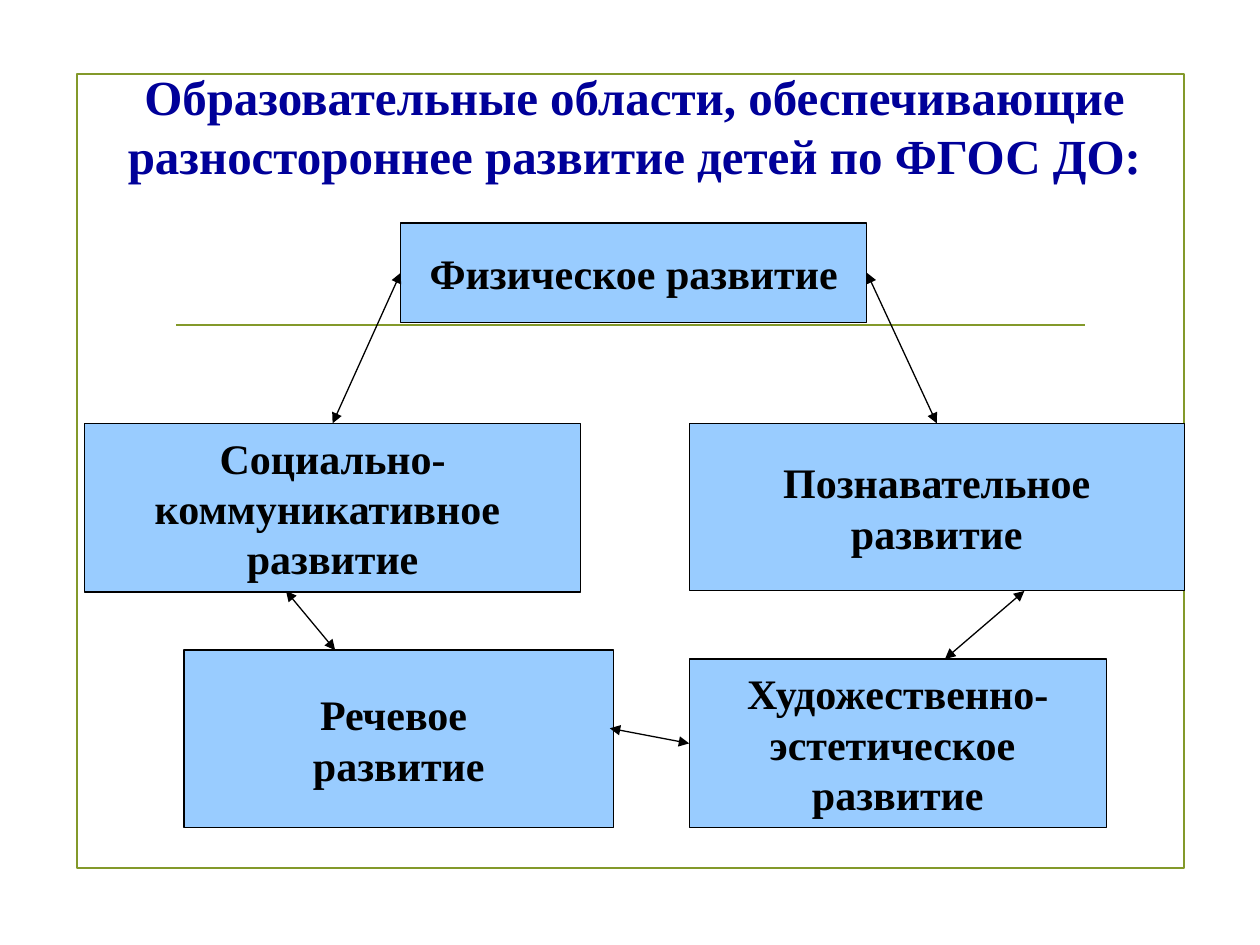
from pptx import Presentation
from pptx.dml.color import RGBColor
from pptx.enum.shapes import MSO_CONNECTOR, MSO_SHAPE
from pptx.enum.text import MSO_ANCHOR, PP_ALIGN
from pptx.oxml.ns import qn
from pptx.util import Inches, Pt
from lxml import etree

RECTANGLE = MSO_SHAPE.RECTANGLE
STRAIGHT = MSO_CONNECTOR.STRAIGHT
CENTER = PP_ALIGN.CENTER
MIDDLE = MSO_ANCHOR.MIDDLE
TOP, LEFT, RIGHT = 0, 1, 3  # connection sites of a rectangle

OLIVE = RGBColor(0x83, 0x99, 0x2A)
NAVY = RGBColor(0x00, 0x00, 0x99)
SKY = RGBColor(0x99, 0xCC, 0xFF)
BLACK = RGBColor(0x00, 0x00, 0x00)
FONT = "Times New Roman"

# The slide is a grid of 100 columns and 75 rows
WIDTH, HEIGHT = Inches(10), Inches(7.5)
COLUMN, ROW = WIDTH / 100, HEIGHT / 75

# Regions: left, top, width, height in columns and rows
FRAME = (6.1, 5.9, 87.9, 63)
TITLE = (6.7, 2.8, 87.3, 14.3)
DIAGRAM = (6.7, 17.7, 87.3, 48)

TITLE_TEXT = "Образовательные области, обеспечивающие разностороннее развитие детей по ФГОС ДО:"

# Educational areas: text and place inside the diagram
AREAS = {
    "physical": ("Физическое развитие", (25.1, 0, 37, 7.9)),
    "artistic": ("Художественно-\nэстетическое \nразвитие", (48, 34.6, 33.1, 13.4)),
    "cognitive": (" Познавательное \nразвитие", (48, 15.9, 39.3, 13.3)),
    "speech": ("Речевое \nразвитие", (7.9, 33.9, 34.1, 14.1)),
    "social": ("Социально-\nкоммуникативное \nразвитие", (0, 15.9, 39.4, 13.4)),
}

# Each arrow end is an (area, side) joint or a point inside the diagram
ARROWS = [
    (("physical", LEFT), ("social", TOP)),
    (("physical", RIGHT), ("cognitive", TOP)),
    ((16, 29.2), (19.9, 33.9)),
    ((41.7, 40.1), ("artistic", LEFT)),
    ((68.3, 34.6), (74.6, 29.2)),
]


def scale(box):
    left, top, width, height = box
    return round(left * COLUMN), round(top * ROW), round(width * COLUMN), round(height * ROW)


def inside(region, left, top):
    return region[0] + left, region[1] + top


def write(shape, text, size, color, wrap):
    frame = shape.text_frame
    frame.text = text
    frame.word_wrap = wrap
    frame.vertical_anchor = MIDDLE
    for para in frame.paragraphs:
        para.alignment = CENTER
        for span in para.runs:
            span.font.name = FONT
            span.font.size = Pt(size)
            span.font.bold = True
            span.font.color.rgb = color


def add_box(page, box, line_color, line_width, fill=None):
    shape = page.shapes.add_shape(RECTANGLE, *scale(box))
    shape.shadow.inherit = False
    if fill is None:
        shape.fill.background()
    else:
        shape.fill.solid()
        shape.fill.fore_color.rgb = fill
    shape.line.color.rgb = line_color
    shape.line.width = Pt(line_width)
    return shape


def add_line(page, start, end, color, width):
    points = [round(value * unit) for point in (start, end)
              for value, unit in zip(point, (COLUMN, ROW))]
    line = page.shapes.add_connector(STRAIGHT, *points)
    line.line.color.rgb = color
    line.line.width = Pt(width)
    etree.SubElement(line._element.spPr, qn("a:effectLst"))
    return line


def add_arrowheads(line):
    outline = line.line._get_or_add_ln()
    for tag in ("a:headEnd", "a:tailEnd"):
        etree.SubElement(outline, qn(tag), type="triangle")


def draw_frame(page, box):
    add_box(page, box, OLIVE, 1.25)
    # Rule across the frame
    add_line(page, inside(box, 7.9, 19.9), inside(box, 80, 19.9), OLIVE, 1.25)


def draw_title(page, box):
    title = page.shapes.add_textbox(*scale(box))
    write(title, TITLE_TEXT, 28, NAVY, True)


def draw_diagram(page, box):
    # Area boxes
    shapes = {}
    for name, (text, (left, top, width, height)) in AREAS.items():
        place = (*inside(box, left, top), width, height)
        shapes[name] = add_box(page, place, BLACK, 0.75, SKY)
        write(shapes[name], text, 24, BLACK, False)

    # Two-headed arrows between the areas
    for ends in ARROWS:
        points = [inside(box, 0, 0) if end[0] in shapes else inside(box, *end) for end in ends]
        arrow = add_line(page, *points, BLACK, 0.75)
        for (name, side), connect in zip(ends, (arrow.begin_connect, arrow.end_connect)):
            if name in shapes:
                connect(shapes[name], side)
        add_arrowheads(arrow)


def main():
    deck = Presentation()
    deck.slide_width, deck.slide_height = WIDTH, HEIGHT
    page = deck.slides.add_slide(deck.slide_layouts[6])
    draw_frame(page, FRAME)
    draw_title(page, TITLE)
    draw_diagram(page, DIAGRAM)
    deck.save("out.pptx")


if __name__ == "__main__":
    main()
